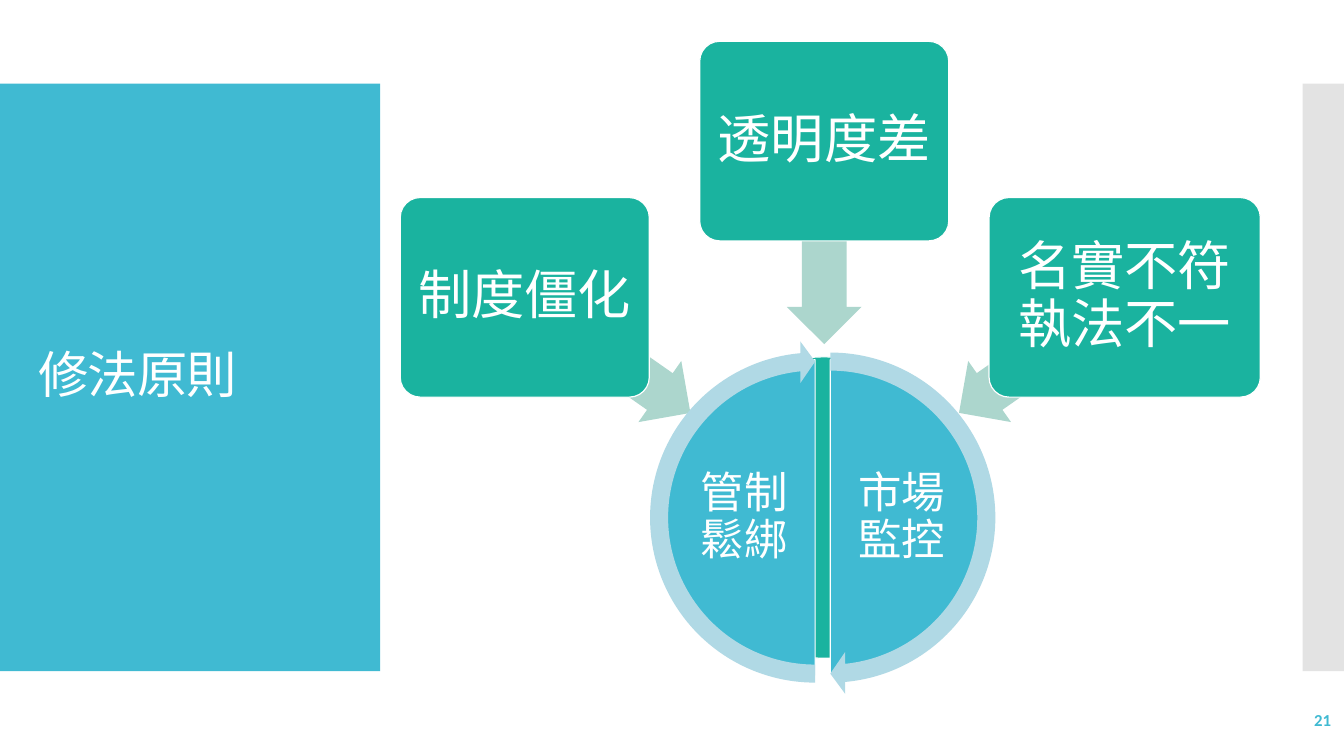
import pptx
import pptx.util
import pptx.dml.color
import pptx.enum.shapes
import pptx.enum.text
import pptx.oxml.ns
import lxml.etree

Inches = pptx.util.Inches
Pt = pptx.util.Pt
MSO = pptx.enum.shapes.MSO_SHAPE
ALIGN = pptx.enum.text.PP_ALIGN

THEME = {
    "font": "Calibri",
    "blue": "40BAD2", "green": "1AB39F", "white": "FFFFFF", "grey": "C8C8C8",
    "pale_green": "ACD6CD", "pale_blue": "B0D9E5",
    "title": 36, "problem": 38, "goal": 31, "number": 12, "outline": 0.85,
}

TITLE = "修法原則"
PAGE = "21"
PROBLEMS = [
    {"text": "制度僵化", "box": (3.97, 1.96, 2.47), "arrow": (5.02, 3.15), "turn": 215},
    {"text": "透明度差", "box": (6.94, 0.41, 2.47), "arrow": (7.17, 2.04), "turn": 270},
    {"text": "名實不符執法不一", "box": (9.81, 1.96, 2.69), "arrow": (9.33, 3.15), "turn": 325},
]
TOP, BOTTOM = 162, 54
GOALS = [
    {"text": "市場監控", "left": 6.67, "text_left": 8.38, "start": TOP, "end": BOTTOM, "tip": 50.725},
    {"text": "管制鬆綁", "left": 6.52, "text_left": 6.82, "start": BOTTOM, "end": TOP, "tip": 158.725},
]
BAND_TOP, BAND_HEIGHT = 0.83, 5.83
BOX_HEIGHT = 1.98
ARROW_SIZE = (2.01, 0.74)
PIE_TOP, PIE_SIZE = 3.57, 3.13
RING_SIZE = 3.51
RING_MARGIN = (RING_SIZE - PIE_SIZE) / 2


def color(name):
    return pptx.dml.color.RGBColor.from_string(THEME[name])


def add_shape(slide, kind, box, fill, adjust=(), outlined=False, turn=0):
    sp = slide.shapes.add_shape(kind, *map(Inches, box))
    sp.shadow.inherit = False
    sp.fill.solid()
    sp.fill.fore_color.rgb = color(fill)
    if outlined:
        sp.line.color.rgb = color("white")
        sp.line.width = Pt(THEME["outline"])
    else:
        sp.line.fill.background()
    for i, value in enumerate(adjust):
        sp.adjustments[i] = value
    sp.rotation = turn
    return sp


def write(sp, text, size, ink="white", align=ALIGN.CENTER, inset=None, bold=False):
    tf = sp.text_frame
    tf.word_wrap = True
    tf.vertical_anchor = pptx.enum.text.MSO_ANCHOR.MIDDLE
    if inset is not None:
        tf.margin_left = tf.margin_right = Inches(inset)
        tf.margin_top = tf.margin_bottom = Inches(inset)
    p = tf.paragraphs[0]
    p.alignment = align
    p.line_spacing = 0.9
    p.font.name = THEME["font"]
    p.font.size = Pt(THEME[size])
    p.font.color.rgb = color(ink)
    p.font.bold = bold
    r = p.add_run()
    r.text = text
    return r


def add_text(slide, box, *args, **kwargs):
    return write(slide.shapes.add_textbox(*map(Inches, box)), *args, **kwargs)


def add_bands(slide):
    add_shape(slide, MSO.RECTANGLE, (0, BAND_TOP, 3.77, BAND_HEIGHT), "blue")
    sp = add_shape(slide, MSO.RECTANGLE, (12.92, BAND_TOP, 0.42, BAND_HEIGHT), "grey")
    qn = pptx.oxml.ns.qn
    rgb = sp.fill._xPr.find(qn("a:solidFill")).find(qn("a:srgbClr"))
    lxml.etree.SubElement(rgb, qn("a:alpha")).set("val", "50000")
    r = add_text(slide, (0.28, 1.23, 3.22, 5.03), TITLE, "title", align=ALIGN.LEFT)
    r.font._element.set("spc", "-60")


def add_problems(slide):
    for item in PROBLEMS:
        add_shape(slide, MSO.LEFT_ARROW, item["arrow"] + ARROW_SIZE, "pale_green",
                  (0.6, 0.5), turn=item["turn"])
        sp = add_shape(slide, MSO.ROUNDED_RECTANGLE, item["box"] + (BOX_HEIGHT,), "green",
                       (0.1,), outlined=True)
        write(sp, item["text"], "problem", inset=0.08)


def add_goals(slide):
    for item in GOALS:
        add_shape(slide, MSO.PIE, (item["left"], PIE_TOP, PIE_SIZE, PIE_SIZE), "blue",
                  (item["start"], item["end"]), outlined=True)
        add_text(slide, (item["text_left"], 4.39, 1.12, 1.49), item["text"], "goal", inset=0.04)
    for item in GOALS:
        ring = (item["left"] - RING_MARGIN, PIE_TOP - RING_MARGIN, RING_SIZE, RING_SIZE)
        add_shape(slide, MSO.CIRCULAR_ARROW, ring, "pale_blue",
                  (0.051, 3.275, item["tip"], item["start"], 0.059))


def main():
    prs = pptx.Presentation()
    prs.slide_width, prs.slide_height = Inches(13.33), Inches(7.5)
    slide = prs.slides.add_slide(prs.slide_layouts[6])
    add_bands(slide)
    add_shape(slide, MSO.OVAL, (6.66, 3.54, 3.03, 2.99), "green", outlined=True)
    add_problems(slide)
    add_goals(slide)
    add_text(slide, (11.63, 6.95, 1.67, 0.4), PAGE, "number", "blue", ALIGN.RIGHT, bold=True)
    prs.save("out.pptx")


if __name__ == "__main__":
    main()
